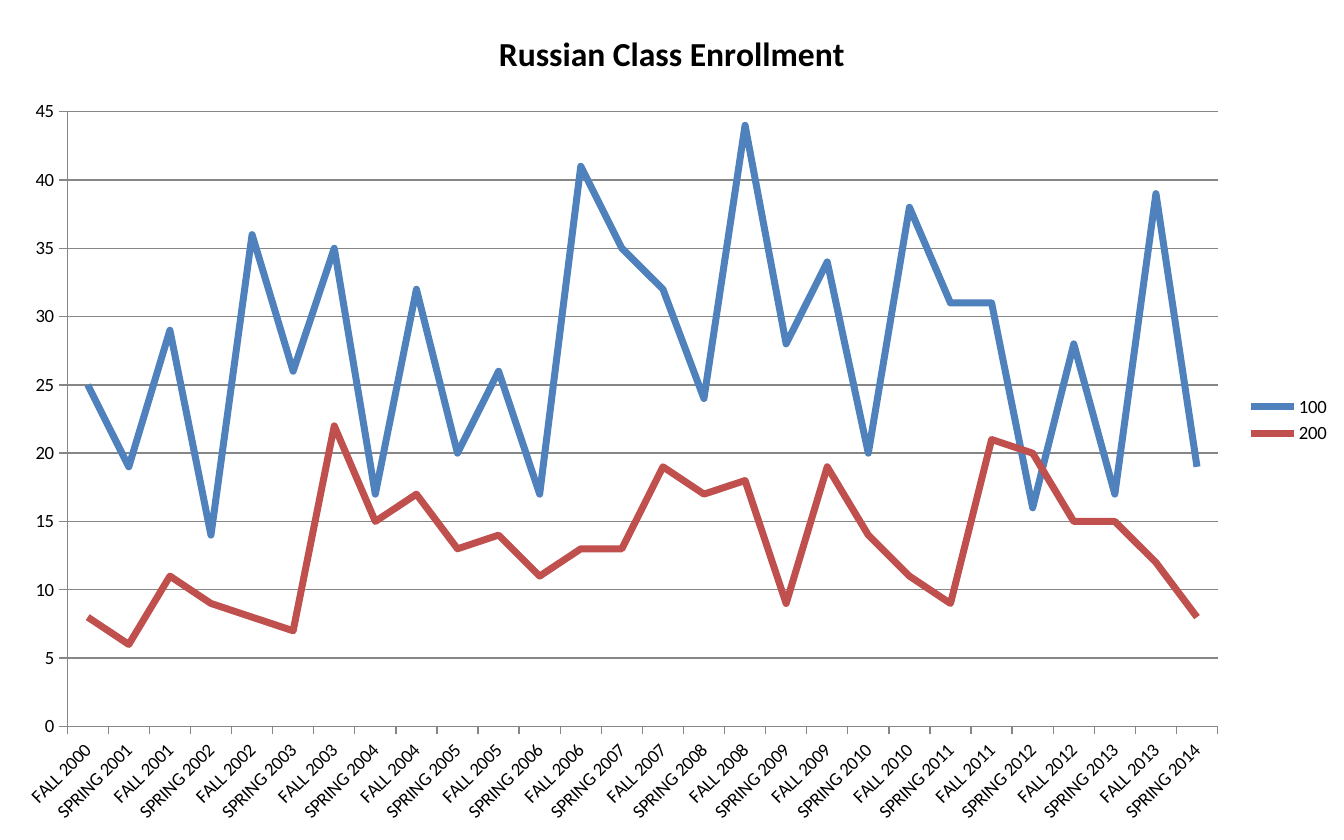
from lxml import etree
from pptx import Presentation
from pptx.chart.data import CategoryChartData
from pptx.dml.color import RGBColor
from pptx.enum import chart as chart_enum
from pptx.oxml.ns import qn
from pptx.util import Pt

BLACK = RGBColor(0x00, 0x00, 0x00)
GRAY = RGBColor(0x86, 0x86, 0x86)
BLUE = RGBColor(0x4F, 0x81, 0xBD)
RED = RGBColor(0xC0, 0x50, 0x4D)

WIDTH, HEIGHT = 720, 450
FONT = "Calibri"
TITLE = "Russian Class Enrollment"

# Terms alternate from fall 2000 to spring 2014
TERMS = [f"{term} {year}" for fall in range(2000, 2014)
         for term, year in (("FALL", fall), ("SPRING", fall + 1))]
ENROLLMENT = {
    "100": (BLUE, [25, 19, 29, 14, 36, 26, 35, 17, 32, 20, 26, 17, 41, 35,
                   32, 24, 44, 28, 34, 20, 38, 31, 31, 16, 28, 17, 39, 19]),
    "200": (RED, [8, 6, 11, 9, 8, 7, 22, 15, 17, 13, 14, 11, 13, 13,
                  19, 17, 18, 9, 19, 14, 11, 9, 21, 20, 15, 15, 12, 8]),
}


def set_format(target, formats):
    for name, value in formats.items():
        setattr(target, name, value)


def format_font(font, size, bold=False):
    set_format(font, {"name": FONT, "size": Pt(size), "bold": bold})
    font.color.rgb = BLACK


def format_line(line, color, width):
    line.color.rgb = color
    line.width = Pt(width)


def place_plot(chart, left, top, width, height):
    """Fix the inner plot area, in fractions of the chart."""
    plot_area = chart.plots[0]._element.getparent()
    layout = plot_area.find(qn("c:layout"))
    if layout is None:
        layout = etree.Element(qn("c:layout"))
        plot_area.insert(0, layout)
    manual = etree.SubElement(layout, qn("c:manualLayout"))
    settings = {"layoutTarget": "inner", "xMode": "edge", "yMode": "edge",
                "x": left, "y": top, "w": width, "h": height}
    for name, value in settings.items():
        etree.SubElement(manual, qn(f"c:{name}")).set("val", str(value))


def format_axes(chart):
    value_axis, category_axis = chart.value_axis, chart.category_axis
    set_format(value_axis, {"minimum_scale": 0, "maximum_scale": 45,
                            "major_unit": 5, "has_major_gridlines": True})
    format_line(value_axis.major_gridlines.format.line, GRAY, 0.75)
    for axis in (value_axis, category_axis):
        axis.major_tick_mark = chart_enum.XL_TICK_MARK.OUTSIDE
        axis.minor_tick_mark = chart_enum.XL_TICK_MARK.NONE
        format_line(axis.format.line, GRAY, 0.75)
        format_font(axis.tick_labels.font, 10)
    # Slant the term labels by 45 degrees
    labels = category_axis._element.find(qn("c:txPr")).find(qn("a:bodyPr"))
    labels.set("rot", "-2700000")
    labels.set("vert", "horz")


def add_enrollment_chart(slide, left, top, width, height):
    data = CategoryChartData()
    data.categories = TERMS
    for course, (_, counts) in ENROLLMENT.items():
        data.add_series(course, counts)
    chart = slide.shapes.add_chart(
        chart_enum.XL_CHART_TYPE.LINE,
        Pt(left), Pt(top), Pt(width), Pt(height), data).chart
    format_font(chart.font, 10)

    # Title
    chart.has_title = True
    title_frame = chart.chart_title.text_frame
    title_frame.text = TITLE
    format_font(title_frame.paragraphs[0].runs[0].font, 18, bold=True)
    chart.chart_title.include_in_layout = False

    # Legend
    chart.has_legend = True
    set_format(chart.legend, {
        "position": chart_enum.XL_LEGEND_POSITION.RIGHT,
        "include_in_layout": False})
    format_font(chart.legend.font, 10)

    # Axes and lines
    format_axes(chart)
    plot = chart.plots[0]
    plot.vary_by_categories = False
    for series in plot.series:
        series.smooth = False
        series.marker.style = chart_enum.XL_MARKER_STYLE.NONE
        format_line(series.format.line, ENROLLMENT[series.name][0], 3.75)
    place_plot(chart, 0.05, 0.133, 0.856, 0.732)


def main():
    presentation = Presentation()
    presentation.slide_width, presentation.slide_height = Pt(WIDTH), Pt(HEIGHT)
    slide = presentation.slides.add_slide(presentation.slide_layouts[6])
    add_enrollment_chart(slide, 0, 0, WIDTH, HEIGHT)
    presentation.save("out.pptx")


if __name__ == "__main__":
    main()
